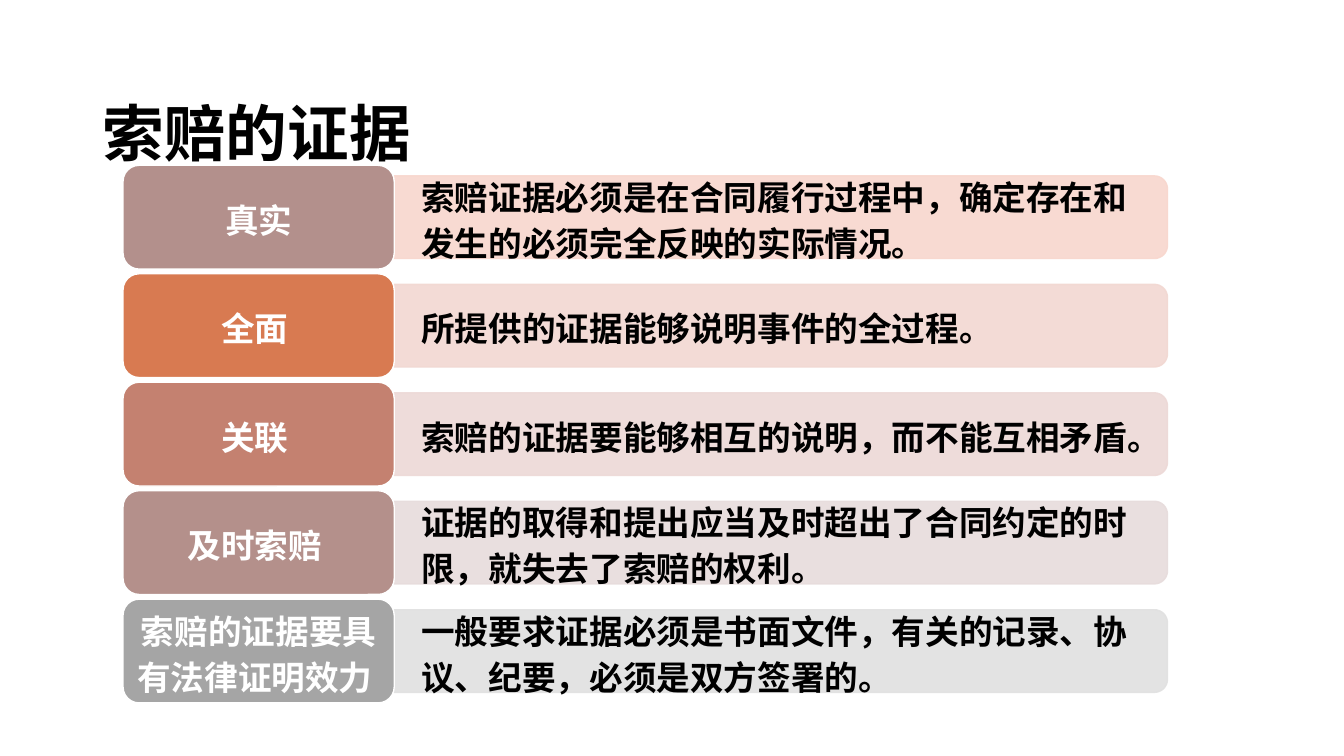
"""Build a slide listing the five requirements for evidence in a claim."""
from math import cos, pi, sin

from lxml import etree
from pptx import Presentation
from pptx.dml.color import RGBColor
from pptx.enum.shapes import MSO_SHAPE
from pptx.enum.text import MSO_ANCHOR, PP_ALIGN
from pptx.oxml.ns import qn
from pptx.util import Inches, Pt

ROUNDED = MSO_SHAPE.ROUNDED_RECTANGLE
MIDDLE = MSO_ANCHOR.MIDDLE
LEFT, CENTER, JUSTIFY = PP_ALIGN.LEFT, PP_ALIGN.CENTER, PP_ALIGN.JUSTIFY

FONT = "Times New Roman"
LABEL_LEFT, LABEL_WIDTH, LABEL_HEIGHT = 1.22, 2.69, 1.03
DETAIL_LEFT, DETAIL_WIDTH, DETAIL_HEIGHT = 3.91, 7.67, 0.82
FIRST_ROW, ROW_PITCH = 1.64, 1.076
LABEL_RADIUS, DETAIL_RADIUS = 0.16, 0.13
ARC_STEPS = 8

REQUIREMENTS = [
    ("真实", "B3908C", "F8D7CE",
     "索赔证据必须是在合同履行过程中，确定存在和发生的必须完全反映的实际情况。"),
    ("全面 ", "D87A51", "F2D8D2", "所提供的证据能够说明事件的全过程。"),
    ("关联 ", "C48170", "EDD9D7", "索赔的证据要能够相互的说明，而不能互相矛盾。"),
    ("及时索赔 ", "B4908B", "E7DCDC",
     "证据的取得和提出应当及时超出了合同约定的时限，就失去了索赔的权利。"),
    ("索赔的证据要具有法律证明效力 ", "A5A5A5", "E1E1E1",
     "一般要求证据必须是书面文件，有关的记录、协议、纪要，必须是双方签署的。"),
]


def color(value):
    """Turn a hex string into a colour."""
    return RGBColor.from_string(value)


def write(shape, text, size, ink, align, spacing, insets):
    """Put one bold, vertically centred paragraph into a shape."""
    frame = shape.text_frame
    frame.word_wrap = True
    frame.vertical_anchor = MIDDLE
    (frame.margin_left, frame.margin_top,
     frame.margin_right, frame.margin_bottom) = map(Inches, insets)
    paragraph = frame.paragraphs[0]
    paragraph.text = text
    paragraph.alignment = align
    paragraph.line_spacing = spacing
    font = paragraph.font
    font.name, font.size, font.bold = FONT, Pt(size), True
    font.color.rgb = color(ink)


def paint(shape, fill, outline):
    """Give a shape a flat fill and a thin outline."""
    shape.shadow.inherit = False
    shape.fill.solid()
    shape.fill.fore_color.rgb = color(fill)
    shape.line.color.rgb = color(outline)
    shape.line.width = Pt(1)


def soften(shape, percent):
    """Make the fill and outline of a shape partly transparent."""
    for tint in shape.element.spPr.iter(qn("a:srgbClr")):
        etree.SubElement(tint, qn("a:alpha"), val=str(percent * 1000))


def add_title(slide, text):
    """Add the slide heading."""
    heading = slide.shapes.add_textbox(*map(Inches, (0.92, 0.4, 11.5, 1.45)))
    write(heading, text, 44, "000000", JUSTIFY, 1.5, (0.1, 0.05, 0.1, 0.05))


def add_detail(slide, top, text, fill):
    """Add a band that is rounded on its right side only."""
    right, bottom = DETAIL_LEFT + DETAIL_WIDTH, top + DETAIL_HEIGHT
    radius = DETAIL_RADIUS
    angles = [pi / 2 * step / ARC_STEPS for step in range(ARC_STEPS + 1)]
    upper = [(right - radius + radius * sin(angle), top + radius - radius * cos(angle))
             for angle in angles]
    lower = [(x, top + bottom - y) for x, y in reversed(upper)]
    builder = slide.shapes.build_freeform(Inches(DETAIL_LEFT), Inches(top))
    outline = upper + lower + [(DETAIL_LEFT, bottom)]
    builder.add_line_segments([(Inches(x), Inches(y)) for x, y in outline], close=True)
    band = builder.convert_to_shape()
    paint(band, fill, fill)
    soften(band, 90)
    write(band, text, 24, "000000", LEFT, 1.14, (0.27, 0.17, 0.31, 0.17))


def add_label(slide, top, text, fill):
    """Add the rounded label at the start of a row."""
    label = slide.shapes.add_shape(
        ROUNDED, *map(Inches, (LABEL_LEFT, top, LABEL_WIDTH, LABEL_HEIGHT)))
    label.adjustments[0] = LABEL_RADIUS / LABEL_HEIGHT
    paint(label, fill, "FFFFFF")
    write(label, text, 24, "FFFFFF", CENTER, 1.14, (0.09, 0.04, 0.09, 0.04))


def main():
    """Build and save the slide."""
    deck = Presentation()
    deck.slide_width, deck.slide_height = Inches(13.33), Inches(7.5)
    slide = deck.slides.add_slide(deck.slide_layouts[6])
    add_title(slide, "索赔的证据 ")
    for row, (label, label_fill, detail_fill, detail) in enumerate(REQUIREMENTS):
        top = FIRST_ROW + row * ROW_PITCH
        add_detail(slide, top + (LABEL_HEIGHT - DETAIL_HEIGHT) / 2, detail, detail_fill)
        add_label(slide, top, label, label_fill)
    deck.save("out.pptx")


if __name__ == "__main__":
    main()
